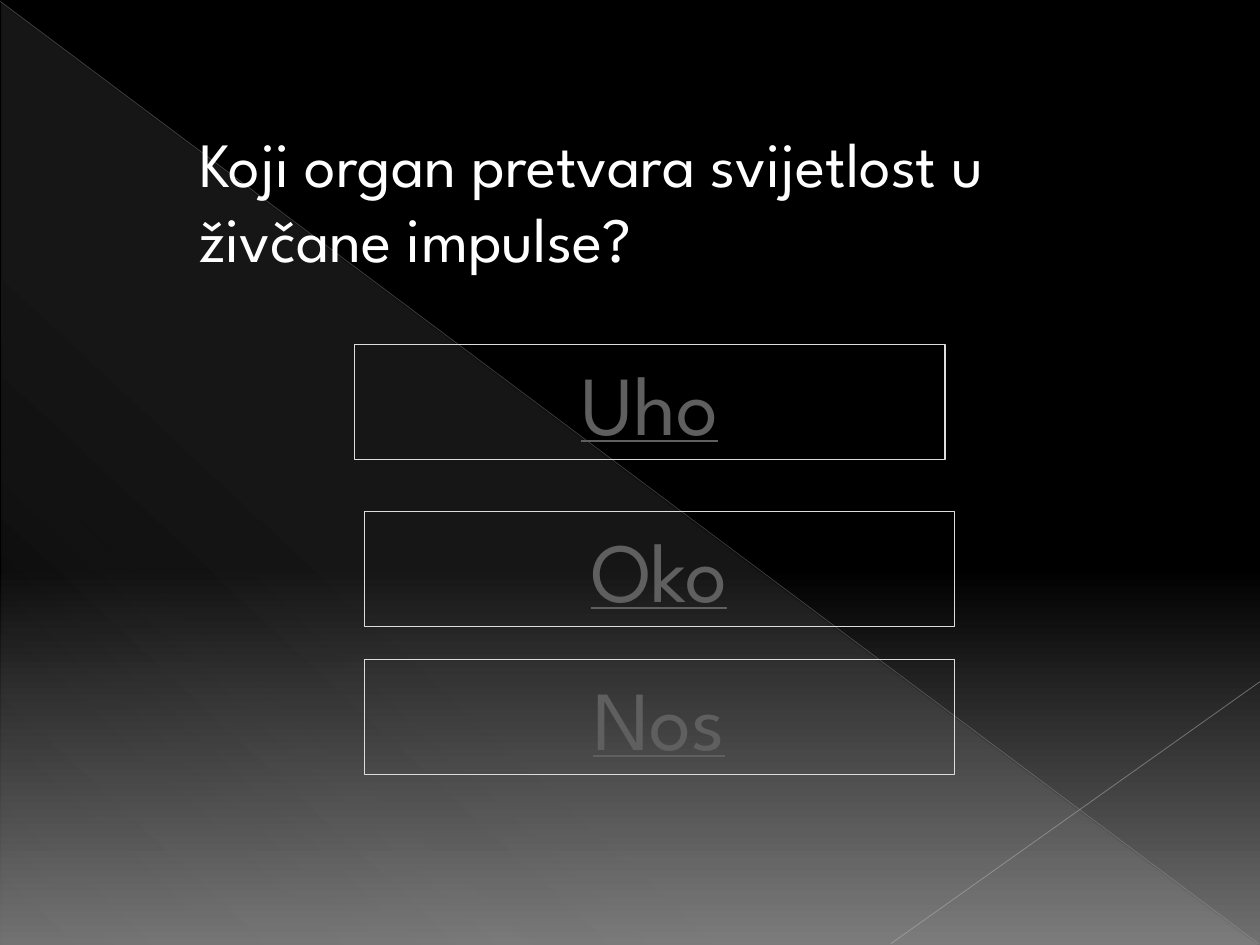
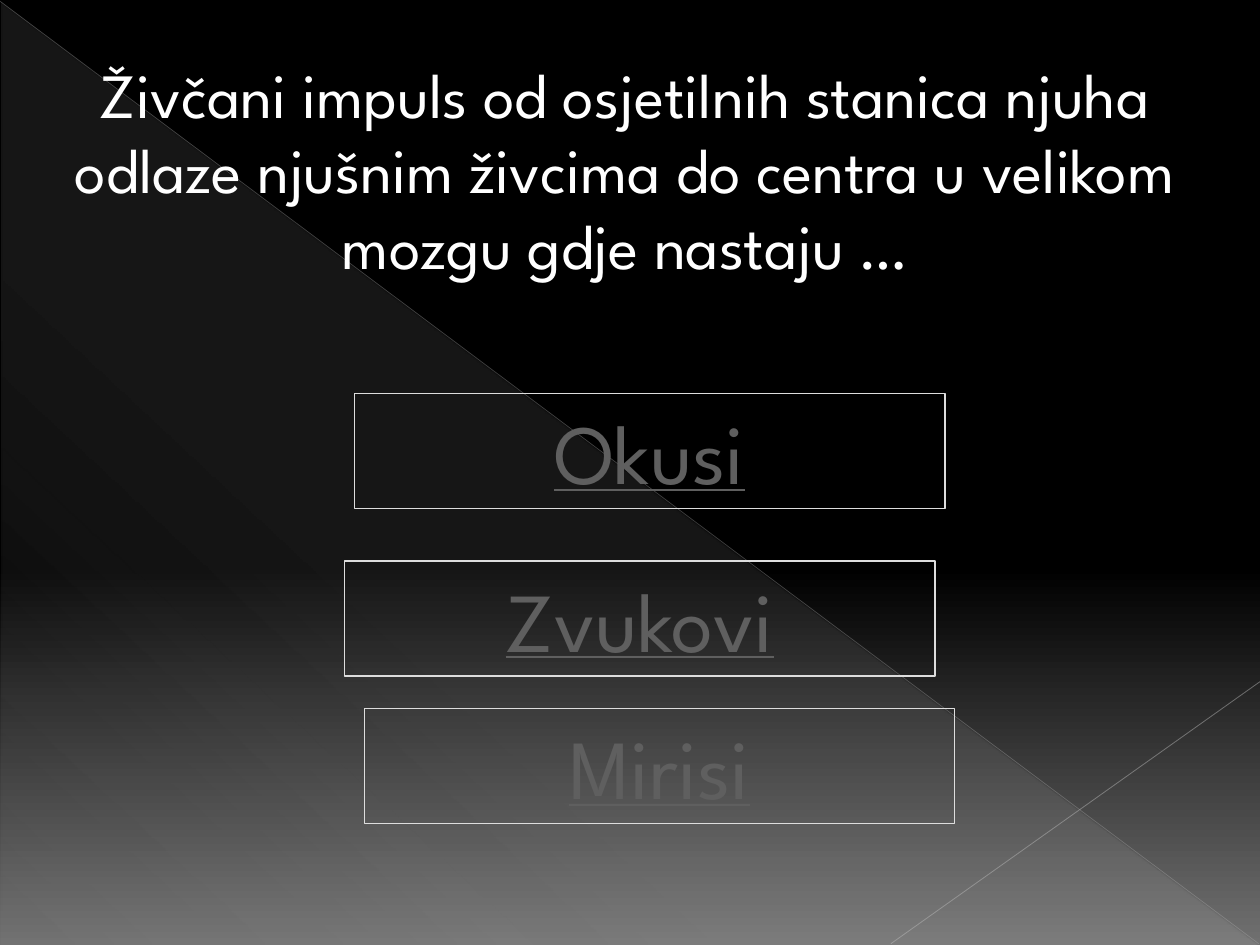
from typing import NamedTuple

from lxml.etree import SubElement as Sub
from pptx import Presentation
from pptx.dml.color import RGBColor as Rgb
from pptx.enum.shapes import MSO_CONNECTOR as Link, MSO_SHAPE as Form
from pptx.enum.text import MSO_AUTO_SIZE as Fit, PP_ALIGN as Align
from pptx.oxml.ns import qn
from pptx.util import Inches, Pt

WIDE, HIGH = Inches(10), Inches(7.5)
COLS, ROWS = 128, 96
FONT = "League Spartan"
HUES = {
    "black": "000000",
    "glow": "707070",
    "veil": "F8F8F8",
    "slope": "B4B4B4",
    "cross": "BDBDBD",
    "frame": "DDDDDD",
    "ask": "FFFFFF",
    "link": "5F5F5F",
}


class Box(NamedTuple):
    col: float
    row: float
    wide: float
    high: float


class Stop(NamedTuple):
    pos: int
    hue: str
    alpha: int = 100


class Ray(NamedTuple):
    start: tuple[float, float]
    end: tuple[float, float]
    hue: str
    width: float
    alpha: int


class Quiz(NamedTuple):
    ask: str
    box: Box
    align: Align
    top: int
    picks: tuple[tuple[str, int], ...]


SKY = (Stop(0, "black"), Stop(60, "black"), Stop(100, "glow"))
VEIL = (Stop(0, "veil", 10), Stop(70, "veil", 8), Stop(100, "veil", 1))
RAYS = (
    Ray((0, 0.13), (127.87, 95.87), "slope", 0.39, 35),
    Ray((128, 69.25), (90.5, 95.87), "cross", 0.47, 45),
)
STEPS = (0, 17, 32)
PICK_WIDE, PICK_HIGH = 60, 11.67
QUIZZES = (
    Quiz(
        "Koji organ pretvara svijetlost u živčane impulse?",
        Box(19, 12, 91, 16.8), Align.LEFT, 35,
        (("Uho", 36), ("Oko", 37), ("Nos", 37)),
    ),
    Quiz(
        "Živčani impuls od osjetilnih stanica njuha odlaze njušnim "
        "živcima do centra u velikom mozgu gdje nastaju …",
        Box(5, 5, 117, 33), Align.CENTER, 40,
        (("Okusi", 36), ("Zvukovi", 35), ("Mirisi", 37)),
    ),
)


def tint(hue: str) -> Rgb:
    return Rgb.from_string(HUES[hue])


def across(col: float) -> int:
    return round(WIDE * col / COLS)


def down(row: float) -> int:
    return round(HIGH * row / ROWS)


def place(box: Box) -> tuple[int, int, int, int]:
    return across(box.col), down(box.row), across(box.wide), down(box.high)


def fade(node, alpha: int) -> None:
    if alpha < 100:
        Sub(node, qn("a:alpha"), val=str(alpha * 1000))


def blend(fill, root, stops: tuple[Stop, ...], angle: int) -> None:
    fill.gradient()
    grad = root.find(".//" + qn("a:gradFill"))
    for child in list(grad):
        grad.remove(child)
    group = Sub(grad, qn("a:gsLst"))
    for stop in stops:
        mark = Sub(group, qn("a:gs"), pos=str(stop.pos * 1000))
        fade(Sub(mark, qn("a:srgbClr"), val=HUES[stop.hue]), stop.alpha)
    Sub(grad, qn("a:lin"), ang=str(angle * 60000), scaled="0")


def write(shape, text: str, *, size: int, hue: str, align: Align,
          under: bool = False) -> None:
    frame = shape.text_frame
    frame.word_wrap = True
    frame.auto_size = Fit.SHAPE_TO_FIT_TEXT
    para = frame.paragraphs[0]
    para.alignment = align
    run = para.add_run()
    run.text = text
    run.font.name = FONT
    run.font.size = Pt(size)
    run.font.color.rgb = tint(hue)
    if under:
        run.font.underline = True


def draw_ray(slide, ray: Ray) -> None:
    (left, top), (right, base) = ray.start, ray.end
    line = slide.shapes.add_connector(
        Link.STRAIGHT, across(left), down(top), across(right), down(base))
    line.line.color.rgb = tint(ray.hue)
    line.line.width = Pt(ray.width)
    fade(line.element.find(".//" + qn("a:srgbClr")), ray.alpha)
    Sub(line.element.spPr, qn("a:effectLst"))


def draw_decor(slide) -> None:
    veil = slide.shapes.add_shape(
        Form.RIGHT_TRIANGLE, *place(Box(0.13, 0.26, 127.74, 95.74)))
    veil.shadow.inherit = False
    veil.line.fill.background()
    blend(veil.fill, veil.element, VEIL, 133)
    for ray in RAYS:
        draw_ray(slide, ray)


def draw_pick(slide, text: str, col: int, row: int) -> None:
    shape = slide.shapes.add_shape(
        Form.RECTANGLE, *place(Box(col, row, PICK_WIDE, PICK_HIGH)))
    shape.shadow.inherit = False
    shape.fill.background()
    shape.line.color.rgb = tint("frame")
    shape.line.width = Pt(0.75)
    write(shape, text, size=48, hue="link", align=Align.CENTER, under=True)


def draw_quiz(deck, quiz: Quiz) -> None:
    slide = deck.slides.add_slide(deck.slide_layouts[6])
    draw_decor(slide)
    title = slide.shapes.add_textbox(*place(quiz.box))
    write(title, quiz.ask, size=36, hue="ask", align=quiz.align)
    for (text, col), step in zip(quiz.picks, STEPS):
        draw_pick(slide, text, col, quiz.top + step)


def main() -> None:
    deck = Presentation()
    deck.slide_width, deck.slide_height = WIDE, HIGH
    master = deck.slide_master
    blend(master.background.fill, master.element, SKY, 90)
    for quiz in QUIZZES:
        draw_quiz(deck, quiz)
    deck.save("out.pptx")


if __name__ == "__main__":
    main()
